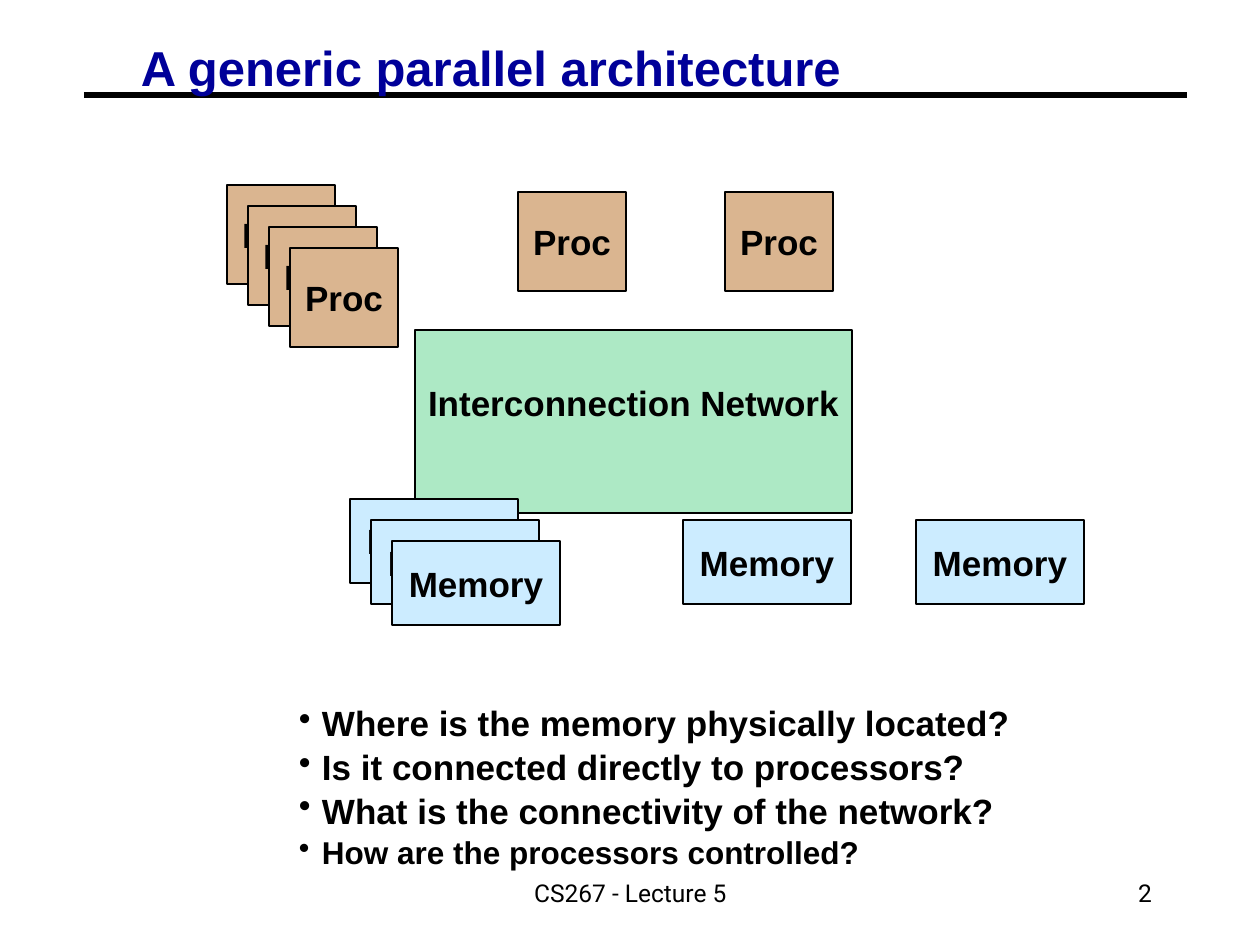
"""Build the slide on a generic parallel architecture."""
from lxml import etree
from pptx import Presentation
from pptx import util as u
from pptx.dml.color import RGBColor
from pptx.enum import shapes, text
from pptx.oxml.ns import qn

PX = 914400 / 126
COLORS = {"ink": "000000", "title": "000099", "proc": "DAB590",
          "network": "ADE9C5", "memory": "CCECFF"}
ALIGN, ANCHOR = text.PP_ALIGN, text.MSO_ANCHOR


def px(*lengths):
    return [u.Emu(round(length * PX)) for length in lengths]


def write(shape, lines, size=20, font="Arial", color="ink", align=ALIGN.LEFT,
          anchor=ANCHOR.TOP, insets=(13, 6, 13, 6)):
    frame = shape.text_frame
    frame.text = "\n".join(lines)
    frame.word_wrap = True
    frame.vertical_anchor = anchor
    (frame.margin_left, frame.margin_top,
     frame.margin_right, frame.margin_bottom) = px(*insets)
    for paragraph in frame.paragraphs:
        paragraph.alignment = align
        for run in paragraph.runs:
            run.font.name = font
            run.font.size = u.Pt(size)
            run.font.bold = font == "Arial"
            run.font.color.rgb = RGBColor.from_string(COLORS[color])
    return frame.paragraphs


presentation = Presentation()
presentation.slide_width, presentation.slide_height = px(1260, 945)
slide = presentation.slides.add_slide(presentation.slide_layouts[6])

rule = slide.shapes.add_connector(shapes.MSO_CONNECTOR.STRAIGHT, *px(84, 95, 1187, 95))
rule.line.color.rgb = RGBColor.from_string(COLORS["ink"])
rule.line.width = u.Pt(3.75)
etree.SubElement(rule._element.spPr, qn("a:effectLst"))

title = slide.shapes.add_textbox(*px(132, 42, 906, 58))
write(title, ["A generic parallel architecture"], 28, color="title",
      insets=(9, 4, 9, 4))[0].line_spacing = 0.87

STEP = 21
procs = [("Proc", "proc", 227 + STEP * i, 185 + STEP * i, 108, 99) for i in range(4)]
procs += [("Proc", "proc", left, 192, 108, 99) for left in (518, 725)]
memories = [("Memory", "memory", 350 + STEP * i, 499 + STEP * i, 168, 84) for i in range(3)]
memories += [("Memory", "memory", left, 520, 168, 84) for left in (683, 916)]
network = ("Interconnection Network", "network", 415, 330, 437, 183)

for label, kind, *box in [network] + procs + memories:
    shape = slide.shapes.add_shape(shapes.MSO_SHAPE.RECTANGLE, *px(*box))
    shape.shadow.inherit = False
    shape.fill.solid()
    shape.fill.fore_color.rgb = RGBColor.from_string(COLORS[kind])
    shape.line.color.rgb = RGBColor.from_string(COLORS["ink"])
    shape.line.width = u.Pt(1)
    if kind == "network":
        write(shape, [label], insets=(13, 52, 0, 6))
    else:
        write(shape, [label], align=ALIGN.CENTER, anchor=ANCHOR.MIDDLE)

questions = slide.shapes.add_textbox(*px(286, 693, 740, 177))
paragraphs = write(questions, ["Where is the memory physically located?",
                               "Is it connected directly to processors?",
                               "What is the connectivity of the network?",
                               "How are the processors controlled?"],
                   insets=(13, 9, 13, 6))
for paragraph in paragraphs:
    paragraph.space_after = u.Pt(1)
    properties = paragraph._p.get_or_add_pPr()
    indent = px(23)[0]
    properties.set("marL", str(indent))
    properties.set("indent", str(-indent))
    etree.SubElement(properties, qn("a:buChar")).set("char", "•")
paragraphs[-1].runs[0].font.size = u.Pt(18)

for label, left, width, align in [("CS267 - Lecture 5", 431, 399, ALIGN.CENTER),
                                  ("2", 903, 262, ALIGN.RIGHT)]:
    footer = slide.shapes.add_textbox(*px(left, 861, width, 63))
    write(footer, [label], 14, "Roboto", align=align, anchor=ANCHOR.MIDDLE)

presentation.save("out.pptx")
